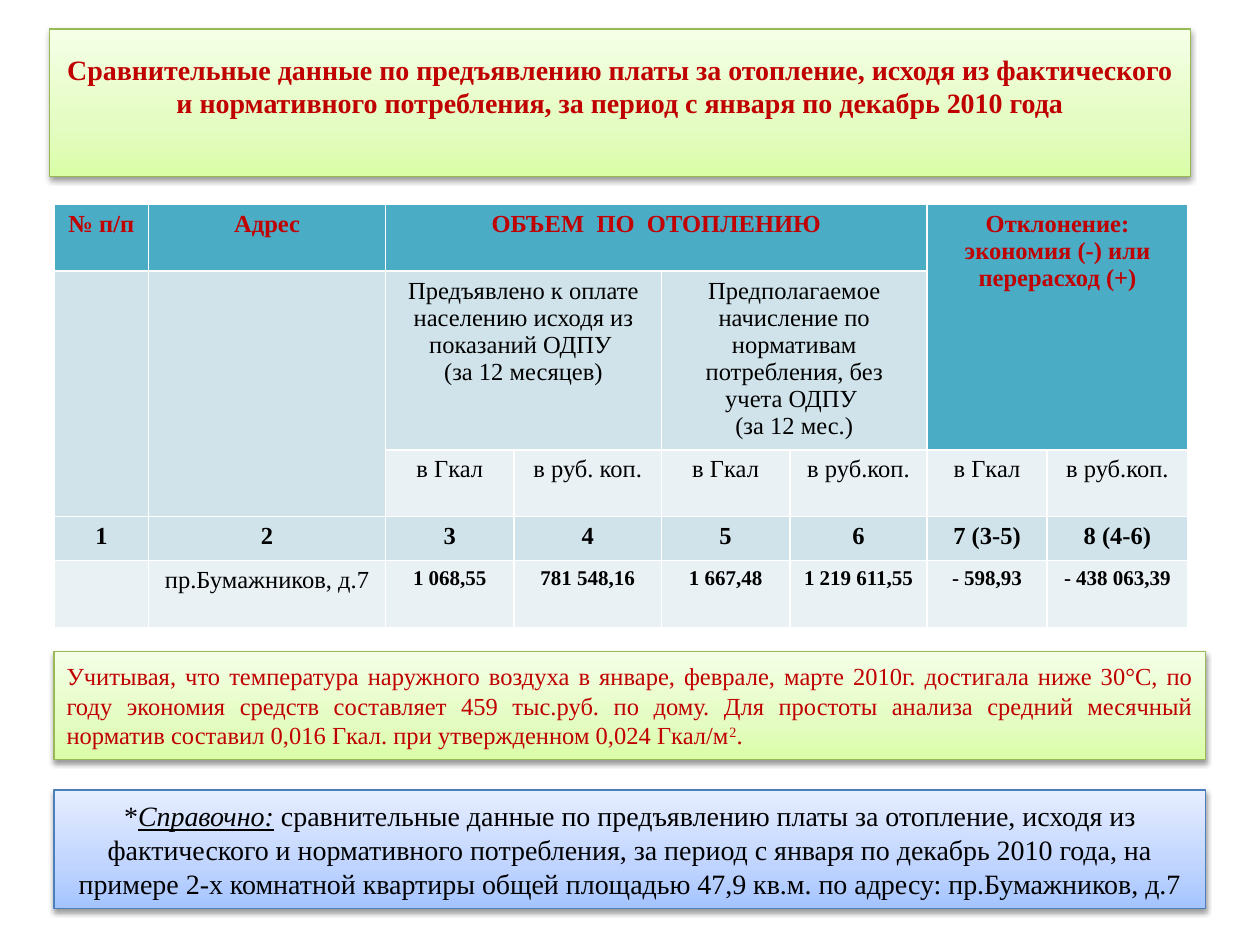
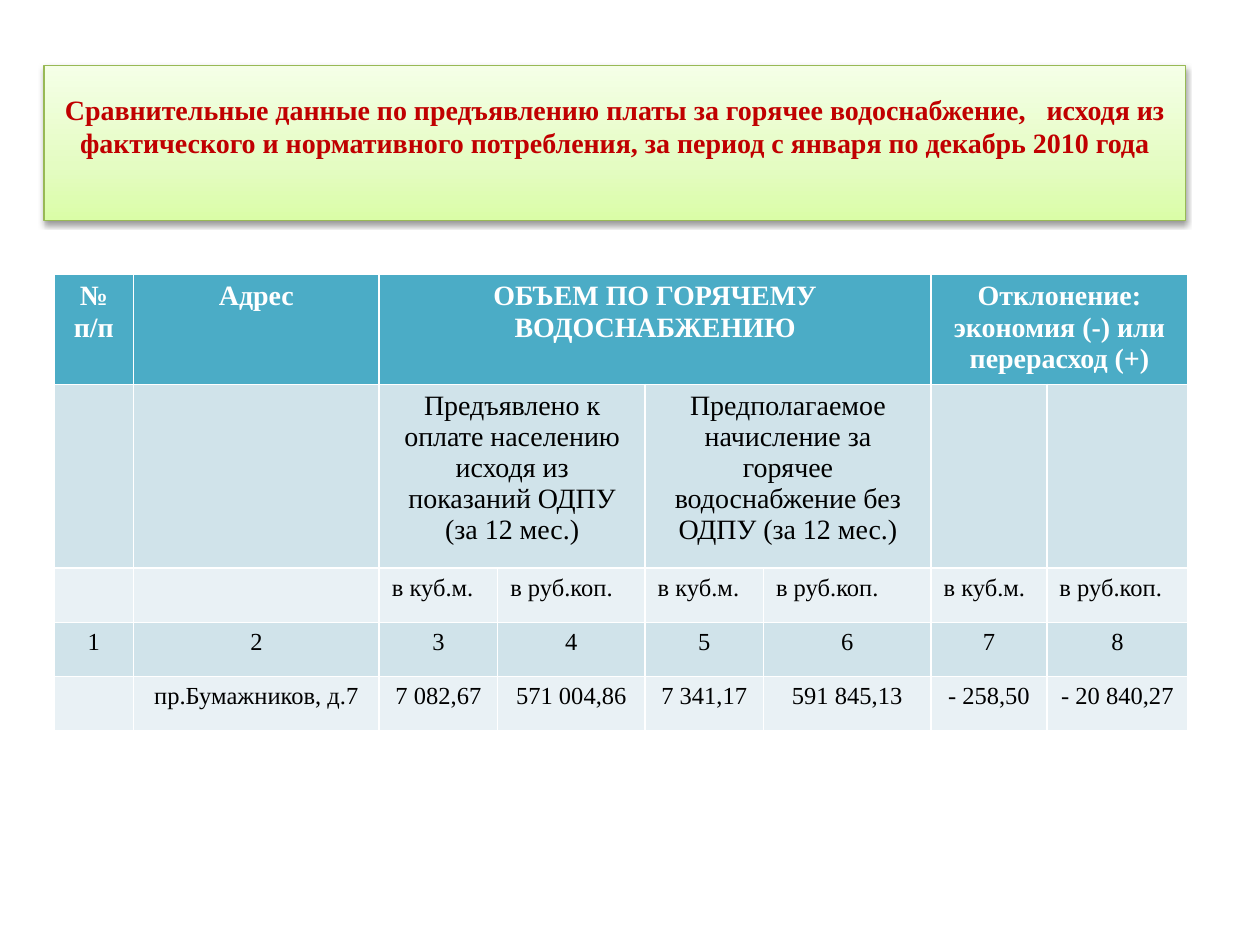
from copy import deepcopy

from lxml import etree
from pptx import Presentation
from pptx.dml.color import RGBColor
from pptx.enum.shapes import MSO_SHAPE
from pptx.enum.text import MSO_ANCHOR, MSO_AUTO_SIZE, PP_ALIGN
from pptx.oxml.ns import qn
from pptx.util import Inches, Pt

RECT = MSO_SHAPE.RECTANGLE
MIDDLE = MSO_ANCHOR.MIDDLE
NO_FIT = MSO_AUTO_SIZE.NONE
LEFT, CENTER, JUSTIFY = PP_ALIGN.LEFT, PP_ALIGN.CENTER, PP_ALIGN.JUSTIFY

FONT = "Times New Roman"
COLORS = {
    "red": "C00000", "black": "000000", "white": "FFFFFF",
    "header": "4BACC6", "band_dark": "D0E3EA", "band_light": "E9F1F5",
    "green_line": "98B955", "blue_line": "4B7EBC",
}
GRADIENTS = {
    "green": ("DAFDA7", "E4FCC2", "F5FFE7"),
    "blue": ("A4C4FF", "BFD4FF", "E6EEFF"),
}
STOPS = (0, 0.35, 1)


def rgb(name):
    return RGBColor.from_string(COLORS[name])


class Deck:
    """Holds the presentation style and the current slide."""

    def __init__(self):
        self.prs = Presentation()
        self.prs.slide_width, self.prs.slide_height = Inches(10), Inches(7.5)
        self.s = None

    def new_slide(self):
        self.s = self.prs.slides.add_slide(self.prs.slide_layouts[5])

    def font(self, r, size, color, bold=False):
        r.font.name, r.font.size = FONT, Pt(size)
        r.font.bold, r.font.color.rgb = bold, rgb(color)

    def panel(self, sp, tone):
        """Gradient fill, thin line and soft shadow."""
        sp.fill.gradient()
        sp.fill.gradient_angle = 90
        stop_list = sp._element.spPr.find(".//" + qn("a:gsLst"))
        stop_list.append(deepcopy(stop_list[-1]))
        for stop, pos, color in zip(sp.fill.gradient_stops, STOPS, GRADIENTS[tone]):
            stop.position = pos
            stop.color.rgb = RGBColor.from_string(color)
        sp.line.color.rgb = rgb(tone + "_line")
        sp.line.width = Pt(0.75)
        sp.shadow.inherit = False
        effects = sp._element.spPr.find(qn("a:effectLst"))
        shadow = etree.SubElement(effects, qn("a:outerShdw"), blurRad="40000",
                                  dist="20000", dir="5400000", rotWithShape="0")
        color = etree.SubElement(shadow, qn("a:srgbClr"), val=COLORS["black"])
        etree.SubElement(color, qn("a:alpha"), val="38000")
        tf = sp.text_frame
        tf.word_wrap, tf.auto_size, tf.vertical_anchor = True, NO_FIT, MIDDLE
        return tf

    def title(self, text, left, top, height):
        sp = self.s.shapes.title
        sp.left, sp.top = Inches(left), Inches(top)
        sp.width, sp.height = Inches(9.06), Inches(height)
        tf = self.panel(sp, "green")
        tf.margin_bottom = Inches(0.32)
        tf.text = text
        p = tf.paragraphs[0]
        p.alignment = CENTER
        self.font(p.runs[0], 16, "red", True)

    def note(self, parts, top, height, tone, size, color, align):
        """Panel of text; returns its runs for further formatting."""
        sp = self.s.shapes.add_shape(RECT, Inches(0.43), Inches(top),
                                     Inches(9.14), Inches(height))
        p = self.panel(sp, tone).paragraphs[0]
        p.alignment = align
        for part in parts:
            r = p.add_run()
            r.text = part
            self.font(r, size, color)
        return p.runs

    def cell_text(self, cell, text, size, color, bold, align):
        cell.text_frame.text = text
        for p in cell.text_frame.paragraphs:
            p.alignment = align
            for r in p.runs:
                self.font(r, size, color, bold)

    def table(self, top, cols, heights, rows, styles, merges):
        """styles: one (size, colour, bold, alignment) per row."""
        tbl = self.s.shapes.add_table(
            len(rows), len(cols), Inches(0.43), Inches(top),
            Inches(sum(cols)), Inches(sum(heights))).table
        for col, width in zip(tbl.columns, cols):
            col.width = Inches(width)
        for i, (row, height) in enumerate(zip(rows, heights)):
            tbl.rows[i].height = Inches(height)
            band = "header" if i == 0 else "band_dark" if i % 2 else "band_light"
            for j, text in enumerate(row):
                cell = tbl.cell(i, j)
                cell.fill.solid()
                cell.fill.fore_color.rgb = rgb(band)
                if text:
                    self.cell_text(cell, text, *styles[i])
        for r1, c1, r2, c2 in merges:
            tbl.cell(r1, c1).merge(tbl.cell(r2, c2))
        return tbl


DEVIATION = "Отклонение: экономия (-) или перерасход (+)"
ADDRESS = "пр.Бумажников, д.7"
GROUPS = [(0, 2, 0, 5), (1, 2, 1, 3), (1, 4, 1, 5)]


def heating(deck):
    deck.new_slide()
    deck.title("Сравнительные данные по предъявлению платы за отопление, исходя из "
               "фактического и нормативного потребления, за период с января по "
               "декабрь 2010 года", 0.39, 0.23, 1.17)

    # Heating volumes
    rows = [
        ["№ п/п", "Адрес", "ОБЪЕМ  ПО  ОТОПЛЕНИЮ", "", "", "", DEVIATION, ""],
        ["", "",
         "Предъявлено к оплате населению исходя из показаний ОДПУ \n(за 12 месяцев)", "",
         "Предполагаемое начисление по нормативам потребления, без учета ОДПУ \n"
         "(за 12 мес.)", "", "", ""],
        ["", "", "в Гкал", "в руб. коп.", "в Гкал", "в руб.коп.", "в Гкал", "в руб.коп."],
        ["1", "2", "3", "4", "5", "6", "7 (3-5)", "8 (4-6)"],
        ["", ADDRESS, "1 068,55", "781 548,16", "1 667,48", "1 219 611,55",
         "- 598,93", "- 438 063,39"],
    ]
    plain = (14, "black", False, CENTER)
    styles = [(14, "red", True, CENTER), plain, plain,
              (14, "black", True, CENTER), (12, "black", True, CENTER)]
    tbl = deck.table(1.62, [0.75, 1.88, 1.02, 1.17, 1.02, 1.09, 0.95, 1.12],
                     [0.53, 1.42, 0.53, 0.35, 0.53], rows, styles,
                     GROUPS + [(0, 6, 1, 7), (1, 0, 2, 0), (1, 1, 2, 1)])
    deck.cell_text(tbl.cell(4, 1), ADDRESS, *plain)

    # Conclusion
    runs = deck.note(
        ["Учитывая, что температура наружного воздуха в январе, феврале, марте 2010г. "
         "достигала ниже 30°С, по году экономия средств составляет 459 тыс.руб. по дому. "
         "Для простоты анализа средний месячный норматив составил 0,016 Гкал. при "
         "утвержденном 0,024 Гкал/м", "2", "."],
        5.17, 0.86, "green", 14, "red", JUSTIFY)
    runs[1].font._element.set("baseline", "30000")

    # Reference
    runs = deck.note(
        ["*", "Справочно:",
         " сравнительные данные по предъявлению платы за отопление, исходя из "
         "фактического и нормативного потребления, за период с января по декабрь "
         "2010 года, на примере 2-х комнатной квартиры общей площадью 47,9 кв.м. "
         "по адресу: пр.Бумажников, д.7"],
        6.27, 0.94, "blue", 16, "black", CENTER)
    runs[1].font.italic = runs[1].font.underline = True


def hot_water(deck):
    deck.new_slide()
    deck.title("Сравнительные данные по предъявлению платы за горячее водоснабжение,   "
               "исходя из фактического и нормативного потребления, за период с января "
               "по декабрь 2010 года", 0.35, 0.52, 1.23)

    # Hot water volumes
    rows = [
        ["№ п/п", "Адрес", "ОБЪЕМ ПО ГОРЯЧЕМУ ВОДОСНАБЖЕНИЮ", "", "", "", DEVIATION, ""],
        ["", "",
         "Предъявлено к оплате населению исходя из показаний ОДПУ (за 12 мес.)", "",
         "Предполагаемое начисление за горячее водоснабжение без ОДПУ (за 12 мес.)",
         "", "", ""],
        ["", ""] + ["в куб.м.", "в руб.коп."] * 3,
        [str(n) for n in range(1, 9)],
        ["", ADDRESS, "7 082,67", "571 004,86", "7 341,17", "591 845,13",
         "- 258,50", "- 20 840,27"],
    ]
    plain = (14, "black", False, CENTER)
    styles = [(16, "white", True, CENTER), (16, "black", False, CENTER),
              (14, "black", False, LEFT), plain, plain]
    deck.table(2.18, [0.63, 1.95, 0.94, 1.17, 0.94, 1.33, 0.92, 1.12],
               [0.87, 1.46, 0.43, 0.43, 0.43], rows, styles,
               GROUPS + [(0, 6, 0, 7)])


def main():
    deck = Deck()
    heating(deck)
    hot_water(deck)
    deck.prs.save("out.pptx")


if __name__ == "__main__":
    main()
